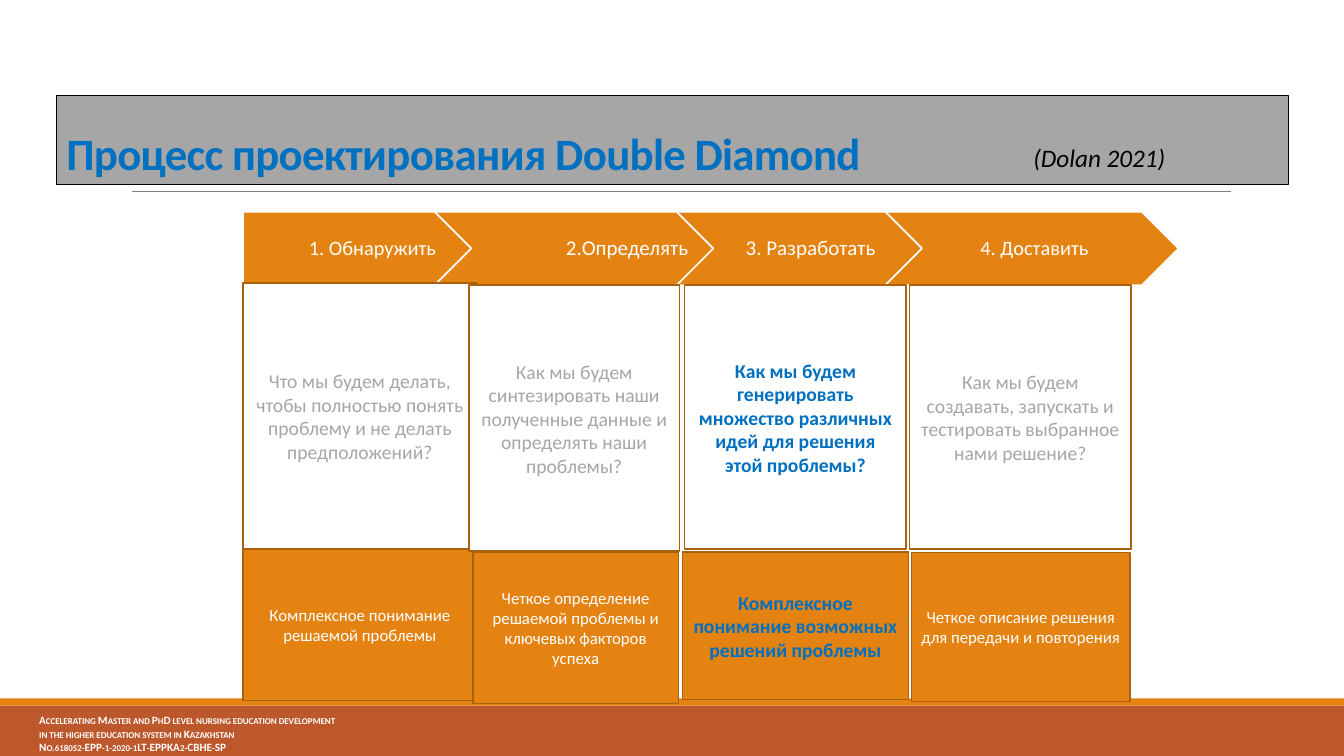
from lxml import etree
from pptx import Presentation
from pptx import util as u
from pptx.dml.color import RGBColor
from pptx.enum import shapes, text

COLORS = {
    "white": "FFFFFF", "black": "000000", "orange": "E48312",
    "brown": "A9610D", "rust": "BD582C", "gray": "A6A6A6",
    "rule": "808080", "blue": "0070C0",
}
DRAWING_NS = "http://schemas.openxmlformats.org/drawingml/2006/main"
KIND = shapes.MSO_SHAPE
ALIGN = text.PP_ALIGN
ANCHOR = text.MSO_ANCHOR

# Stages: label, label size, left, width
STAGES = [
    ("1. Обнаружить", 14.5, 2.41, 2.68),
    ("2.Определять", 15, 4.31, 3.77),
    ("3. Разработать", 15, 6.71, 2.61),
    ("4. Доставить", 14.5, 8.78, 2.91),
]
# Cards: text, (left, top, width, height), highlighted
RESULTS = [
    ("Комплексное понимание решаемой проблемы", (2.41, 5.45, 2.32, 1.5), False),
    ("Четкое определение решаемой проблемы и ключевых факторов успеха",
     (4.69, 5.48, 2.04, 1.5), False),
    ("Комплексное понимание возможных решений проблемы",
     (6.77, 5.48, 2.24, 1.46), True),
    ("Четкое описание решения для передачи и повторения",
     (9.04, 5.48, 2.17, 1.48), False),
]
QUESTIONS = [
    ("Что мы будем делать, чтобы полностью понять проблему и не делать предположений?",
     (2.41, 2.81, 2.32, 2.64), False),
    ("Как мы будем синтезировать наши полученные данные и определять наши проблемы?",
     (4.65, 2.83, 2.09, 2.64), False),
    ("Как мы будем генерировать множество различных идей для решения этой проблемы?",
     (6.79, 2.83, 2.2, 2.62), True),
    ("Как мы будем создавать, запускать и тестировать выбранное нами решение?",
     (9.02, 2.83, 2.2, 2.62), False),
]
FOOTER = [
    "Accelerating Master and PhD level nursing education development",
    "in the higher education system in Kazakhstan",
    "No.618052-EPP-1-2020-1LT-EPPKA2-CBHE-SP",
]


def color(name):
    return RGBColor.from_string(COLORS[name])


def inches(box):
    return [u.Inches(value) for value in box]


def write(holder, words, size, ink, bold=False, italic=False,
          align=ALIGN.LEFT, anchor=ANCHOR.TOP, spacing=None, **run_attributes):
    frame = holder.text_frame
    frame.text = words
    frame.word_wrap = True
    frame.vertical_anchor = anchor
    for paragraph in frame.paragraphs:
        paragraph.alignment = align
        paragraph.line_spacing = spacing
        for run in paragraph.runs:
            font = run.font
            font.name = "Calibri"
            font.size = u.Pt(size)
            font.bold = bold
            font.italic = italic
            font.color.rgb = color(ink)
            for key, value in run_attributes.items():
                font._element.set(key, value)


def add_block(slide, box, fill, line=None, width=1.25, kind=KIND.RECTANGLE):
    block = slide.shapes.add_shape(kind, *inches(box))
    block.shadow.inherit = False
    block.fill.solid()
    block.fill.fore_color.rgb = color(fill)
    if line:
        block.line.color.rgb = color(line)
        block.line.width = u.Pt(width)
    else:
        block.line.fill.background()
    return block


def add_label(slide, box, words, size, ink, **style):
    write(slide.shapes.add_textbox(*inches(box)), words, size, ink, **style)


def add_rule(slide, ends):
    rule = slide.shapes.add_connector(shapes.MSO_CONNECTOR.STRAIGHT, *inches(ends))
    rule.line.color.rgb = color("rule")
    rule.line.width = u.Pt(0.5)
    etree.SubElement(rule._element.spPr, f"{{{DRAWING_NS}}}effectLst")


def add_stage(slide, kind, label, size, left, width):
    stage = add_block(slide, (left, 2.1, width, 0.73), "orange", "white", kind=kind)
    write(stage, label, size, "white", align=ALIGN.CENTER,
          anchor=ANCHOR.MIDDLE, spacing=0.9)
    frame = stage.text_frame
    frame.margin_left = u.Inches(0.09 if kind == KIND.PENTAGON else 0.07)
    frame.margin_right = u.Inches(0.02)
    frame.margin_top = frame.margin_bottom = u.Inches(0.04)


def add_cards(slide, cards, fill, size, ink):
    for words, box, highlighted in cards:
        card = add_block(slide, box, fill, "brown")
        write(card, words, 14 if highlighted else size,
              "blue" if highlighted else ink, bold=highlighted,
              align=ALIGN.CENTER, anchor=ANCHOR.MIDDLE)


def main():
    deck = Presentation()
    deck.slide_width, deck.slide_height = inches((13.33, 7.5))
    slide = deck.slides.add_slide(deck.slide_layouts[6])

    # Footer band and rule under the title
    add_block(slide, (0, 7, 13.33, 0.5), "rust")
    add_block(slide, (0, 6.93, 13.33, 0.07), "orange")
    add_rule(slide, (1.31, 1.9, 12.21, 1.9))
    add_label(slide, (0.29, 7.03, 4.59, 0.47), "\n".join(FOOTER), 8, "white",
              bold=True, cap="small")

    # Title and citation
    title = add_block(slide, (0.56, 0.95, 12.22, 0.88), "gray", "black", 1)
    write(title, "Процесс проектирования Double Diamond", 32, "blue", bold=True,
          anchor=ANCHOR.BOTTOM, spacing=0.85, spc="-50")
    add_label(slide, (10.15, 1.36, 2.5, 0.4), "(Dolan 2021)", 18, "black", italic=True)

    # Stage arrows
    for index, stage in enumerate(STAGES):
        add_stage(slide, KIND.CHEVRON if index else KIND.PENTAGON, *stage)

    # Results below, questions above
    add_cards(slide, RESULTS, "orange", 12, "white")
    add_cards(slide, QUESTIONS, "white", 14, "gray")

    deck.save("out.pptx")


if __name__ == "__main__":
    main()
